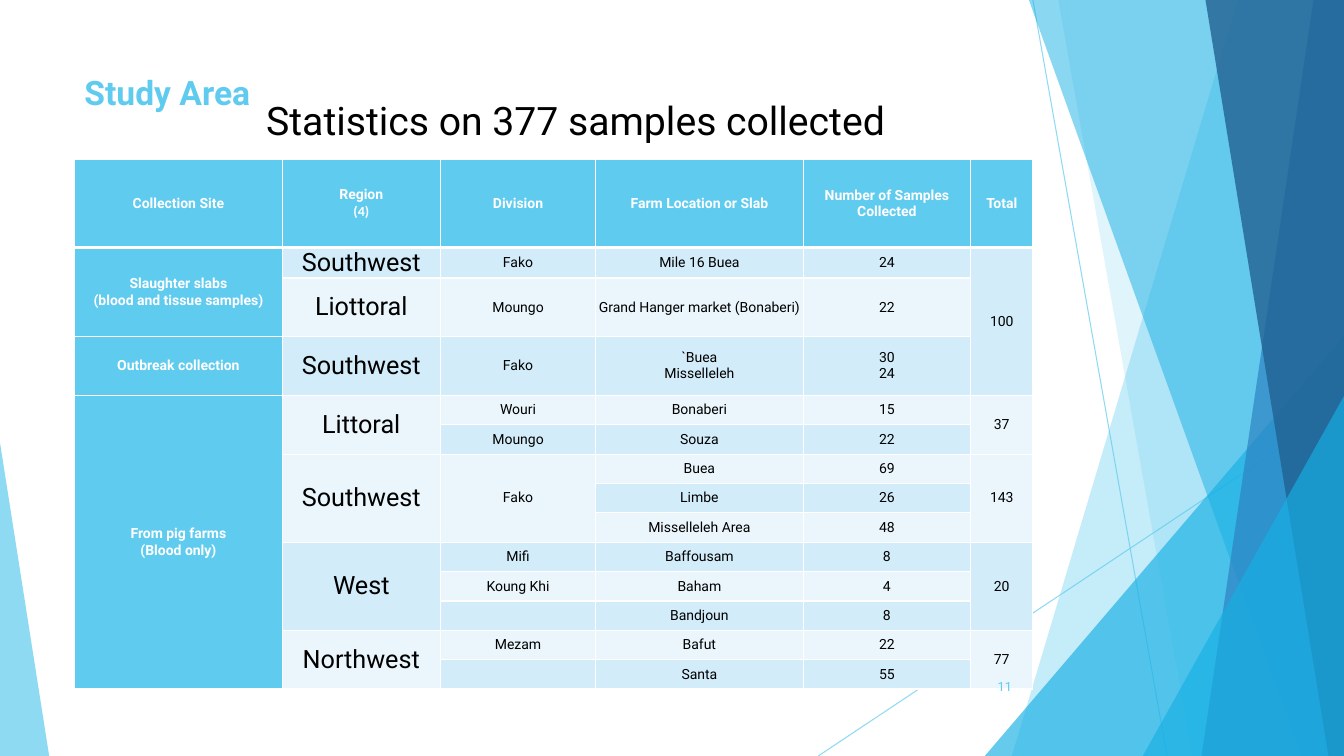
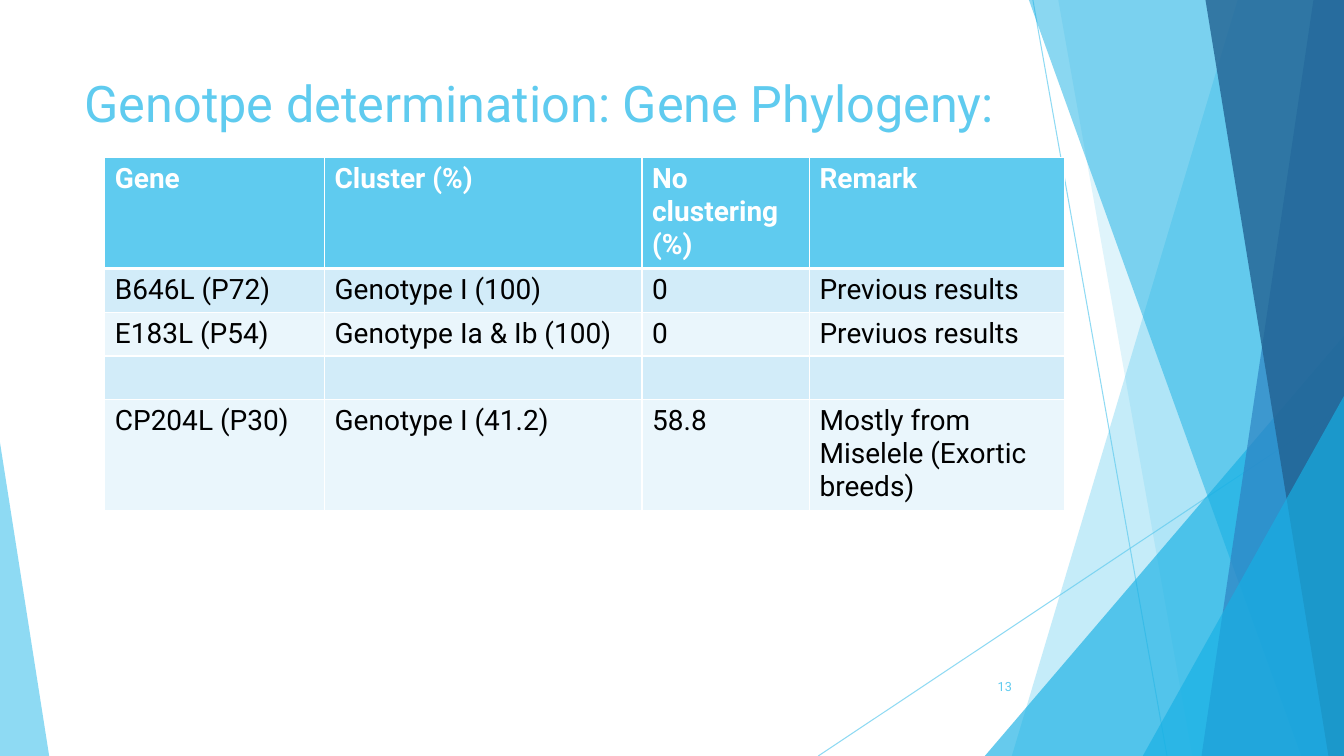
from dataclasses import dataclass

from lxml import etree
from pptx import Presentation
from pptx.dml.color import RGBColor
from pptx.enum.shapes import MSO_CONNECTOR, MSO_SHAPE
from pptx.enum.text import MSO_ANCHOR, PP_ALIGN
from pptx.oxml.ns import qn
from pptx.util import Cm, Pt

LEFT, CENTER, RIGHT = PP_ALIGN.LEFT, PP_ALIGN.CENTER, PP_ALIGN.RIGHT
TOP, MIDDLE = MSO_ANCHOR.TOP, MSO_ANCHOR.MIDDLE
STRAIGHT, TRIANGLE = MSO_CONNECTOR.STRAIGHT, MSO_SHAPE.ISOSCELES_TRIANGLE


@dataclass(frozen=True)
class Theme:
    font: str = "Roboto"
    note_font: str = "Calibri"
    sky: str = "5FCBEF"
    cyan: str = "17B0E4"
    blue: str = "2E83C3"
    navy: str = "226292"
    white: str = "FFFFFF"
    black: str = "000000"
    bands: tuple = ("EAF6FC", "D2ECF9")
    title: int = 36
    subtitle: int = 28
    small_title: int = 24
    table: int = 20
    region: int = 18
    dense_table: int = 10
    page_number: int = 9
    hairline: float = 0.75
    border: int = 1
    header_border: int = 3


THEME = Theme()
WIDTH, HEIGHT = 33.87, 19.05

# Backdrop, back to front (cm)
LINES = [(26.03, 0, 29.41, HEIGHT), (WIDTH, 10.23, 20.62, HEIGHT)]
# Bands run from the top edge to the bottom edge, up to the right side:
# ("band", top x, bottom x, colour, opacity)
# Triangles stand on the bottom edge:
# ("triangle", left, top, width, apex, colour, opacity)
BACKDROP = [
    ("band", 31.19, 25.5, THEME.sky, 36),
    ("band", 26.67, 30.05, THEME.sky, 20),
    ("triangle", 24.82, 8.46, 9.05, 1, THEME.cyan, 66),
    ("band", 25.93, 32.79, THEME.cyan, 50),
    ("band", 33.1, 30.28, THEME.blue, 70),
    ("band", 30.38, 33.48, THEME.navy, 80),
    ("triangle", 28.8, 9.98, 5.07, 1, THEME.cyan, 66),
    ("triangle", 0, 11.15, 1.24, 0, THEME.sky, 70),
]

# Tables: None continues the cell above
SAMPLES = [
    ("Collection Site", "Region\n(4)", "Division", "Farm Location or Slab",
     "Number of Samples Collected", "Total"),
    ("Slaughter slabs\n(blood and tissue samples)", "Southwest", "Fako",
     "Mile 16 Buea", "24", "100"),
    (None, "Liottoral", "Moungo", "Grand Hanger market (Bonaberi)", "22", None),
    ("Outbreak collection", "Southwest", "Fako", "`Buea\nMisselleleh", "30\n24", None),
    ("From pig farms\n(Blood only)", "Littoral", "Wouri", "Bonaberi", "15", "37"),
    (None, None, "Moungo", "Souza", "22", None),
    (None, "Southwest", "Fako", "Buea", "69", "143"),
    (None, None, None, "Limbe", "26", None),
    (None, None, None, "Misselleleh Area", "48", None),
    (None, "West", "Mifi", "Baffousam", "8", "20"),
    (None, None, "Koung Khi", "Baham", "4", None),
    (None, None, "", "Bandjoun", "8", None),
    (None, "Northwest", "Mezam", "Bafut", "22", "77"),
    (None, None, "", "Santa", "55", None),
]
SAMPLE_COLUMNS = [5.23, 3.99, 3.91, 5.23, 4.22, 1.57]
SAMPLE_ROW = 0.74
SAMPLE_ROWS = [2.22, SAMPLE_ROW] + [2 * SAMPLE_ROW] * 2 + [SAMPLE_ROW] * 10

GENES = [
    ("Gene", "Cluster (%)", "No clustering (%)", "Remark"),
    ("B646L (P72)", "Genotype I (100)", "0", "Previous results"),
    ("E183L (P54)", "Genotype Ia & Ib (100)", "0", "Previuos results"),
    ("", "", "", ""),
    ("CP204L (P30)", "Genotype I (41.2)", "58.8",
     "Mostly from Miselele (Exortic breeds)"),
]
GENE_COLUMNS = [5.54, 8, 4.22, 6.43]
GENE_ROWS = [2.72, 1.08, 1.08, 1.08, 2.72]


def rgb(colour):
    return RGBColor.from_string(colour)


def style_text(frame, size, colour, bold=False, align=LEFT):
    for paragraph in frame.paragraphs:
        paragraph.alignment = align
        font = paragraph.font
        font.name, font.size, font.bold = THEME.font, Pt(size), bold
        font.color.rgb = rgb(colour)


def add_text(slide, text, box, size, colour=THEME.sky, bold=False, align=LEFT, anchor=TOP):
    frame = slide.shapes.add_textbox(*map(Cm, box)).text_frame
    frame.word_wrap = True
    frame.vertical_anchor = anchor
    frame.text = text
    style_text(frame, size, colour, bold, align)


# Backdrop
def set_opacity(shape, percent):
    for colour in shape.element.iter(qn("a:srgbClr")):
        etree.SubElement(colour, qn("a:alpha")).set("val", str(percent * 1000))


def add_backdrop(slide):
    """Draw the shared shapes and move them to the slide's layout."""
    layout = slide.slide_layout
    for placeholder in list(layout.placeholders):
        layout.shapes.element.remove(placeholder.element)
    group = slide.shapes.add_group_shape()
    for ends in LINES:
        line = group.shapes.add_connector(STRAIGHT, *map(Cm, ends))
        line.line.color.rgb = rgb(THEME.sky)
        line.line.width = Pt(THEME.hairline)
        etree.SubElement(line.element.spPr, qn("a:effectLst"))
        set_opacity(line, 70)
    for kind, *place, colour, opacity in BACKDROP:
        if kind == "band":
            top_x, bottom_x = place
            outline = group.shapes.build_freeform(Cm(top_x), 0)
            corners = [(WIDTH, 0), (WIDTH, HEIGHT), (bottom_x, HEIGHT)]
            outline.add_line_segments([(Cm(x), Cm(y)) for x, y in corners])
            shape = outline.convert_to_shape()
        else:
            left, top, width, apex = place
            shape = group.shapes.add_shape(
                TRIANGLE, Cm(left), Cm(top), Cm(width), Cm(HEIGHT - top))
            shape.adjustments[0] = apex
        shape.shadow.inherit = False
        shape.fill.solid()
        shape.fill.fore_color.rgb = rgb(colour)
        shape.line.fill.background()
        set_opacity(shape, opacity)
    layout.shapes.element.append(group.element)


# Tables
def set_borders(cell, row):
    widths = {
        "L": THEME.border,
        "R": THEME.border,
        "T": THEME.header_border if row == 1 else THEME.border,
        "B": THEME.header_border if row == 0 else THEME.border,
    }
    properties = cell._tc.get_or_add_tcPr()
    for side, width in widths.items():
        line = etree.SubElement(properties, qn(f"a:ln{side}"), w=str(Pt(width)))
        fill = etree.SubElement(line, qn("a:solidFill"))
        etree.SubElement(fill, qn("a:srgbClr"), val=THEME.white)


def merge_continued(table, rows):
    for column in range(len(rows[0])):
        start = 0
        for row in range(1, len(rows) + 1):
            if row < len(rows) and rows[row][column] is None:
                continue
            if row - start > 1:
                table.cell(start, column).merge(table.cell(row - 1, column))
            start = row


def add_table(slide, rows, left, top, widths, heights, size,
              dense=False, column_sizes=None):
    frame = slide.shapes.add_table(
        len(rows), len(widths), Cm(left), Cm(top), Cm(sum(widths)), Cm(sum(heights)))
    table = frame.table
    table.first_row = table.horz_banding = False
    for column, width in zip(table.columns, widths):
        column.width = Cm(width)
    for row, height in zip(table.rows, heights):
        row.height = Cm(height)
    for r, values in enumerate(rows):
        for c, value in enumerate(values):
            cell = table.cell(r, c)
            heading = r == 0 or (dense and c == 0)
            set_borders(cell, r)
            cell.fill.solid()
            cell.fill.fore_color.rgb = rgb(THEME.sky if heading else THEME.bands[r % 2])
            if dense:
                cell.margin_left = cell.margin_right = 0
                cell.margin_top = cell.margin_bottom = 0
                cell.vertical_anchor = MIDDLE
            cell.text = value or ""
            text_size = size if heading else (column_sizes or {}).get(c, size)
            style_text(cell.text_frame, text_size,
                       THEME.white if heading else THEME.black,
                       heading, CENTER if dense else LEFT)
    merge_continued(table, rows)
    return table


def add_page_number(slide, number):
    add_text(slide, number, (23.85, 16.79, 1.9, 1.02), THEME.page_number,
             align=RIGHT, anchor=MIDDLE)


# Slides
def build_study_area(slide):
    add_text(slide, "Study Area", (1.88, 1.7, 23.88, 1.8), THEME.small_title, bold=True)
    table = add_table(slide, SAMPLES, 1.88, 4.02, SAMPLE_COLUMNS, SAMPLE_ROWS,
                      THEME.dense_table, dense=True, column_sizes={1: THEME.region})
    table.cell(0, 1).text_frame.paragraphs[1].font.name = THEME.note_font
    add_text(slide, "Statistics on 377 samples collected", (1.02, 2.29, 26.97, 1.45),
             THEME.subtitle, THEME.black, align=CENTER)
    add_page_number(slide, "11")


def build_genotypes(slide):
    add_text(slide, "Genotpe determination: Gene Phylogeny:",
             (1.88, 1.7, 24.97, 1.93), THEME.title)
    add_table(slide, GENES, 2.64, 3.97, GENE_COLUMNS, GENE_ROWS, THEME.table)
    add_page_number(slide, "13")


def main():
    presentation = Presentation()
    presentation.slide_width, presentation.slide_height = Cm(WIDTH), Cm(HEIGHT)
    blank = presentation.slide_layouts[6]
    study_area = presentation.slides.add_slide(blank)
    genotypes = presentation.slides.add_slide(blank)
    add_backdrop(study_area)
    build_study_area(study_area)
    build_genotypes(genotypes)
    presentation.save("out.pptx")


if __name__ == "__main__":
    main()
